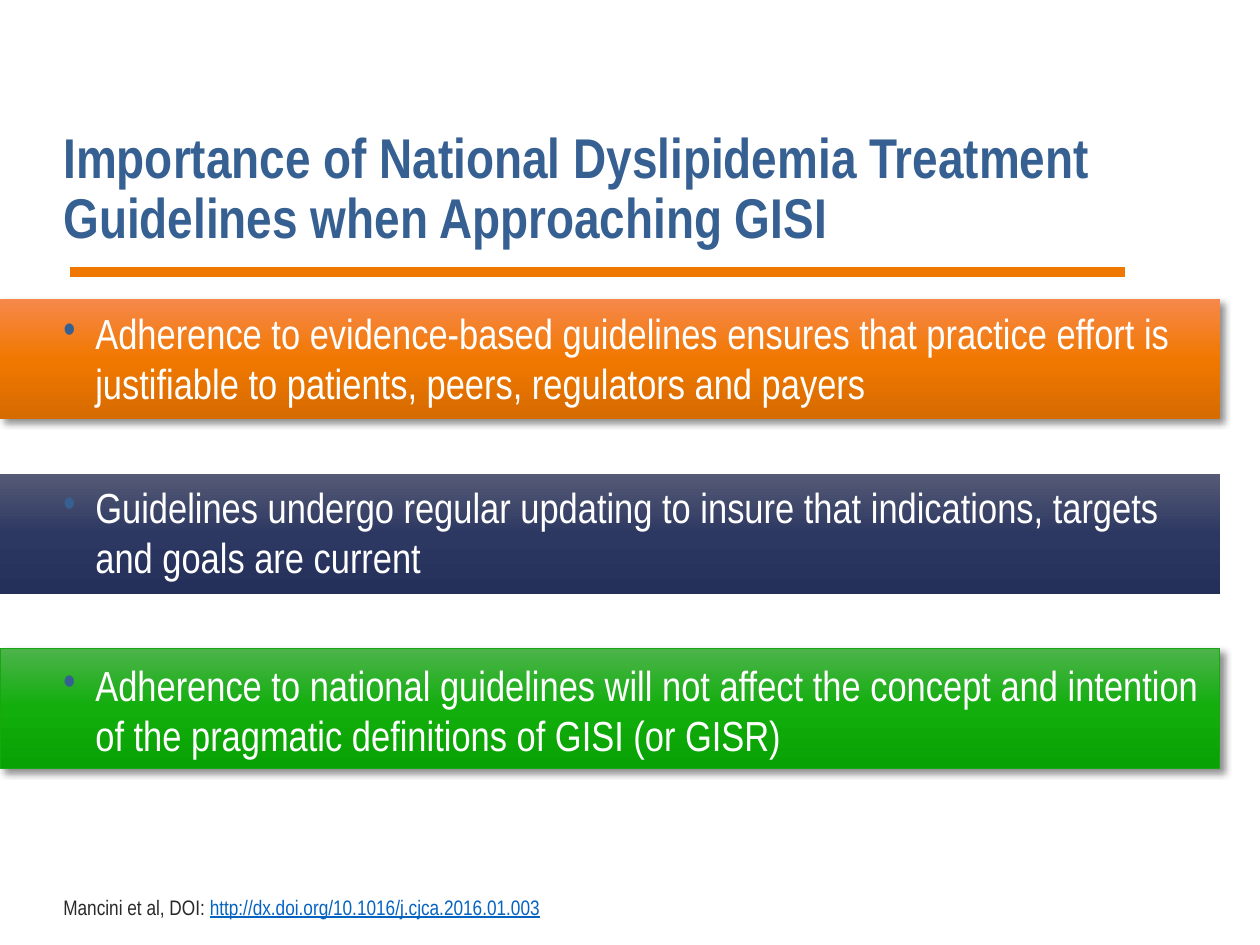
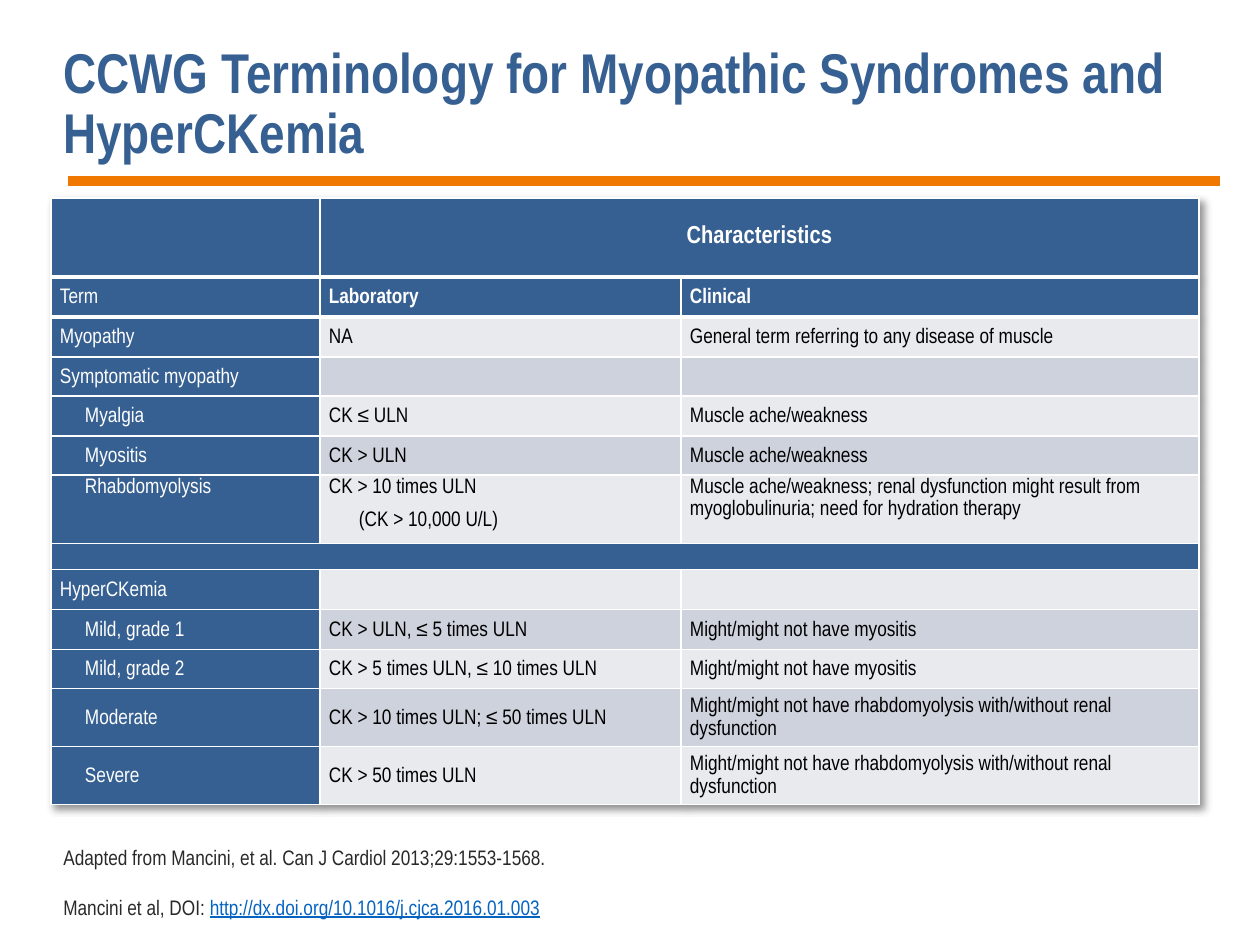
import lxml.etree
import pptx
import pptx.dml.color
import pptx.enum.shapes
import pptx.enum.text
import pptx.oxml.ns
import pptx.util

Pt = pptx.util.Pt
ALIGN = pptx.enum.text.PP_ALIGN
ANCHOR = pptx.enum.text.MSO_ANCHOR
BLUE, ORANGE, WHITE, BLACK = "376092", "F17800", "FFFFFF", "000000"
INK, LINK = "282928", "0563C1"
STRIPES = ["E8EAEE", "CED2DC"]
LEFT, WIDE = 51, 1169

BANDS = [
    (299, 301, ["F6884B", ORANGE, "D66B00"], None, True,
     "Adherence to evidence-based guidelines ensures that practice effort is "
     "justifiable to patients, peers, regulators and payers"),
    (474, 475, ["555A75", "2D3862", "25305A"], None, False,
     "Guidelines undergo regular updating to insure that indications, targets "
     "and goals are current"),
    (648, 653, ["4DB34C", "11AE0C", "09A204"], "18A713", True,
     "Adherence to national guidelines will not affect the concept and intention "
     "of the pragmatic definitions of GISI (or GISR)"),
]

# height, indent of the term, then the three cells
ROWS = [
    (79, 0, "", "Characteristics", ""),
    (40, 0, "Term", "Laboratory", "Clinical"),
    (40, 0, "Myopathy", "NA", "General term referring to any disease of muscle"),
    (39, 0, "Symptomatic myopathy", "", ""),
    (40, 25, "Myalgia", "CK ≤ ULN", "Muscle ache/weakness"),
    (39, 25, "Myositis", "CK > ULN", "Muscle ache/weakness"),
    (56, 25, "Rhabdomyolysis", "CK > 10 times ULN\n(CK > 10,000 U/L)",
     "Muscle ache/weakness; renal dysfunction might result from "
     "myoglobulinuria; need for hydration therapy"),
    (26, 0, "", "", ""),
    (40, 0, "HyperCKemia", "", ""),
    (40, 25, "Mild, grade 1", "CK > ULN, ≤ 5 times ULN",
     "Might/might not have myositis"),
    (39, 25, "Mild, grade 2", "CK > 5 times ULN, ≤ 10 times ULN",
     "Might/might not have myositis"),
    (45, 25, "Moderate", "CK > 10 times ULN; ≤ 50 times ULN",
     "Might/might not have rhabdomyolysis with/without renal dysfunction"),
    (45, 25, "Severe", "CK > 50 times ULN",
     "Might/might not have rhabdomyolysis with/without renal dysfunction"),
]
COLS = [269, 361, 518]
HEADS, GAP, TALL = 2, 7, 6


def px(num):
    return pptx.util.Emu(num * 914400 // 126)


def rgb(code):
    return pptx.dml.color.RGBColor.from_string(code)


def put(item, **vals):
    for name, val in vals.items():
        setattr(item, name, val)


def sub(node, tag, **attrs):
    return lxml.etree.SubElement(node, pptx.oxml.ns.qn(tag), attrs)


def tint(node, code):
    """Add a plain colour below an XML node."""
    return sub(node, "a:srgbClr", val=code)


def shade(effects):
    """Fill an effect list with the soft lower-right shadow."""
    drop = sub(effects, "a:outerShdw", blurRad=str(Pt(4)), dist=str(Pt(3)),
               dir="2700000", algn="tl", rotWithShape="0")
    sub(tint(drop, BLACK), "a:alpha", val="43000")


def indent(para, left, hang=0):
    para._p.get_or_add_pPr().set("marL", str(px(left)))
    para._p.get_or_add_pPr().set("indent", str(-px(hang)))


class Deck:
    font = "Arial Narrow"

    def __init__(self):
        self.prs = pptx.Presentation()
        put(self.prs, slide_width=px(1260), slide_height=px(945))

    def page(self):
        blank = self.prs.slide_layouts[6]
        self.shapes = self.prs.slides.add_slide(blank).shapes

    def run(self, para, text, size, color, **style):
        run = para.add_run()
        run.text = text
        put(run.font, name=self.font, size=Pt(size), **style)
        run.font.color.rgb = rgb(color)

    def box(self, top, high, anchor=ANCHOR.TOP):
        frame = self.shapes.add_textbox(
            px(LEFT), px(top), px(WIDE), px(high)).text_frame
        put(frame, word_wrap=True, vertical_anchor=anchor)
        return frame

    def title(self, text, top):
        para = self.box(top, 122, ANCHOR.BOTTOM).paragraphs[0]
        para.line_spacing = 0.9
        self.run(para, text, 32, BLUE, bold=True)

    def rule(self, left, right, y):
        line = self.shapes.add_connector(
            pptx.enum.shapes.MSO_CONNECTOR.STRAIGHT,
            px(left), px(y), px(right), px(y))
        line.line.color.rgb = rgb(ORANGE)
        line.line.width = Pt(6)
        sub(line._element.spPr, "a:effectLst")

    def band(self, top, text_top, stops, edge, shadow, text):
        bar = self.shapes.add_shape(
            pptx.enum.shapes.MSO_SHAPE.RECTANGLE, 0, px(top), px(1220), px(120))
        bar.fill.gradient()
        bar.fill.gradient_angle = 270
        grads = bar._element.spPr.find(".//" + pptx.oxml.ns.qn("a:gsLst"))
        for old in list(grads):
            grads.remove(old)
        for i, code in enumerate(stops):
            tint(sub(grads, "a:gs", pos=str(i * 50000)), code)
        if edge:
            bar.line.color.rgb = rgb(edge)
            bar.line.width = Pt(0.5)
        else:
            bar.line.fill.background()
        bar.shadow.inherit = False
        if shadow:
            shade(bar._element.spPr.find(pptx.oxml.ns.qn("a:effectLst")))

        para = self.box(text_top, 130).paragraphs[0]
        put(para, space_before=Pt(6), space_after=Pt(6))
        indent(para, 32, 32)
        props = para._p.get_or_add_pPr()
        tint(sub(props, "a:buClr"), BLUE)
        sub(props, "a:buFont", typeface=self.font)
        sub(props, "a:buChar", char="•")
        self.run(para, text, 24, WHITE)

    def source(self, first=None):
        """Write the reference at the foot, below an optional first line."""
        frame = self.box(826, 100, ANCHOR.BOTTOM)
        para = frame.paragraphs[0]
        if first:
            self.run(para, first, 12, INK)
            para = frame.add_paragraph()
            para.space_before = Pt(14)
        self.run(para, "Mancini et al, DOI: ", 12, INK)
        self.run(para, "http://dx.doi.org/10.1016/j.cjca.2016.01.003", 12, LINK,
                 underline=True)

    def cell(self, cell, text, fill, color, left, thick, anchor, form, size,
             bold):
        """Fill one cell; thick names the border sides drawn heavier."""
        put(cell, margin_left=px(9), margin_right=px(9), margin_top=0,
            margin_bottom=0, vertical_anchor=anchor)
        cell.fill.solid()
        cell.fill.fore_color.rgb = rgb(fill)
        props = cell._tc.get_or_add_tcPr()
        for i, side in enumerate("LRTB"):
            width = Pt(2.25 if side in thick else 1)
            line = sub(props, "a:ln" + side, w=str(width))
            tint(sub(line, "a:solidFill"), WHITE)
            props.insert(i, line)
        frame = cell.text_frame
        for i, part in enumerate(text.split("\n")):
            para = frame.add_paragraph() if i else frame.paragraphs[0]
            indent(para, 30 if i else left)
            if part:
                put(para, **form)
                self.run(para, part, size, color, bold=bold)
            else:
                sub(para._p, "a:endParaRPr", sz="1200")

    def table(self, top):
        table = self.shapes.add_table(
            len(ROWS), len(COLS), px(LEFT), px(top), px(sum(COLS)),
            px(sum(row[0] for row in ROWS))).table
        put(table, first_row=False, horz_banding=False)
        props = table._tbl.tblPr
        effects = sub(props, "a:effectLst")
        props.insert(0, effects)
        shade(effects)
        for col, wide in zip(table.columns, COLS):
            col.width = px(wide)
        body = dict(line_spacing=1.15, space_after=Pt(6))
        forms = {0: dict(alignment=ALIGN.CENTER),
                 1: dict(line_spacing=1.15, space_after=Pt(10)),
                 2: dict(body, space_before=Pt(6))}
        for r, (high, left, *texts) in enumerate(ROWS):
            table.rows[r].height = px(high)
            head = r < HEADS
            thick = ("B" if r == 0 else "") + ("T" if 0 < r <= HEADS else "")
            thick += "B" if r == 1 else ""
            for c, text in enumerate(texts):
                dark = head or r == GAP or c == 0
                self.cell(
                    table.cell(r, c), text, BLUE if dark else STRIPES[r % 2],
                    WHITE if dark else BLACK, 0 if c else left, thick,
                    anchor=ANCHOR.TOP if r == TALL else ANCHOR.MIDDLE,
                    form=forms.get(r, body), size=12 if r else 14,
                    bold=head and c > 0)
        table.cell(0, 1).merge(table.cell(0, 2))
        table.cell(GAP, 0).merge(table.cell(GAP, 2))


def main():
    deck = Deck()

    deck.page()
    deck.source()
    for band in BANDS:
        deck.band(*band)
    deck.title("Importance of National Dyslipidemia Treatment Guidelines "
               "when Approaching GISI", 135)
    deck.rule(70, 1125, 272)

    deck.page()
    deck.rule(68, 1220, 181)
    deck.title("CCWG Terminology for Myopathic Syndromes and HyperCKemia", 50)
    deck.source("Adapted from Mancini, et al. Can J Cardiol 2013;29:1553-1568.")
    deck.table(198)

    deck.prs.save("out.pptx")


if __name__ == "__main__":
    main()
